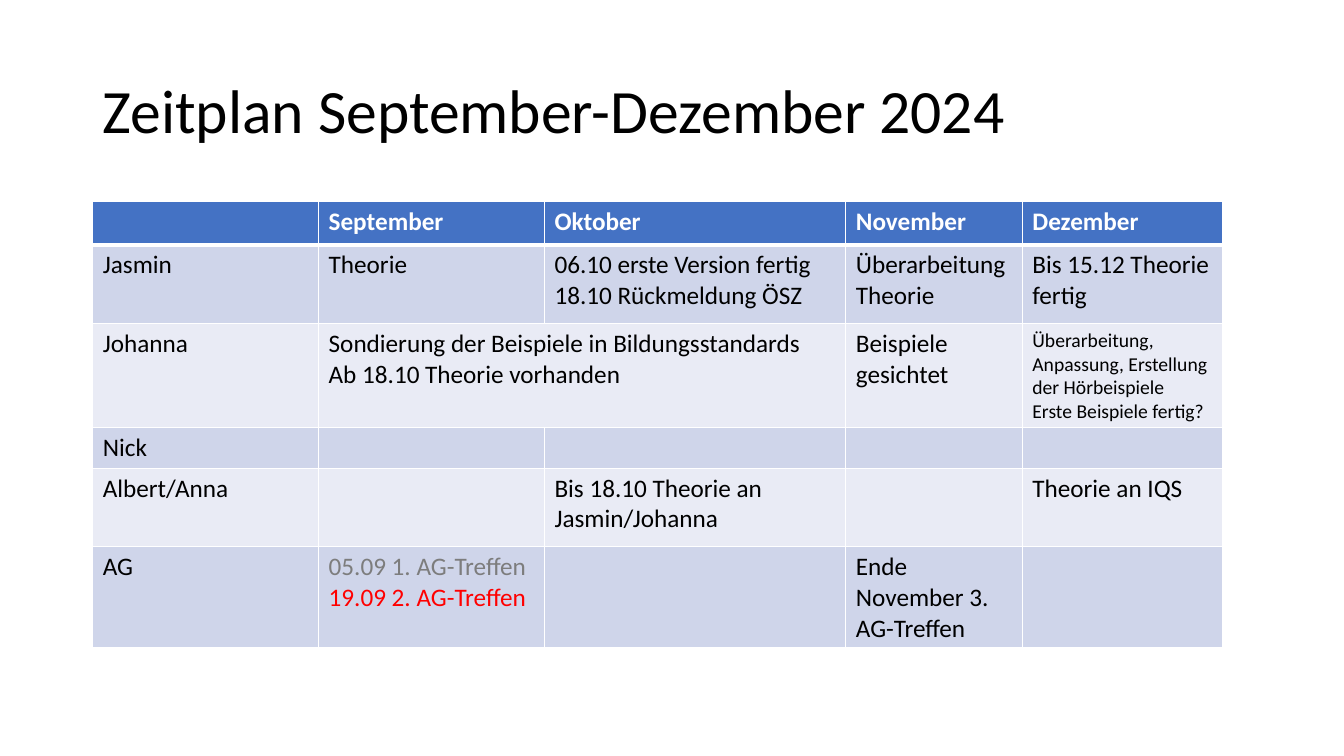
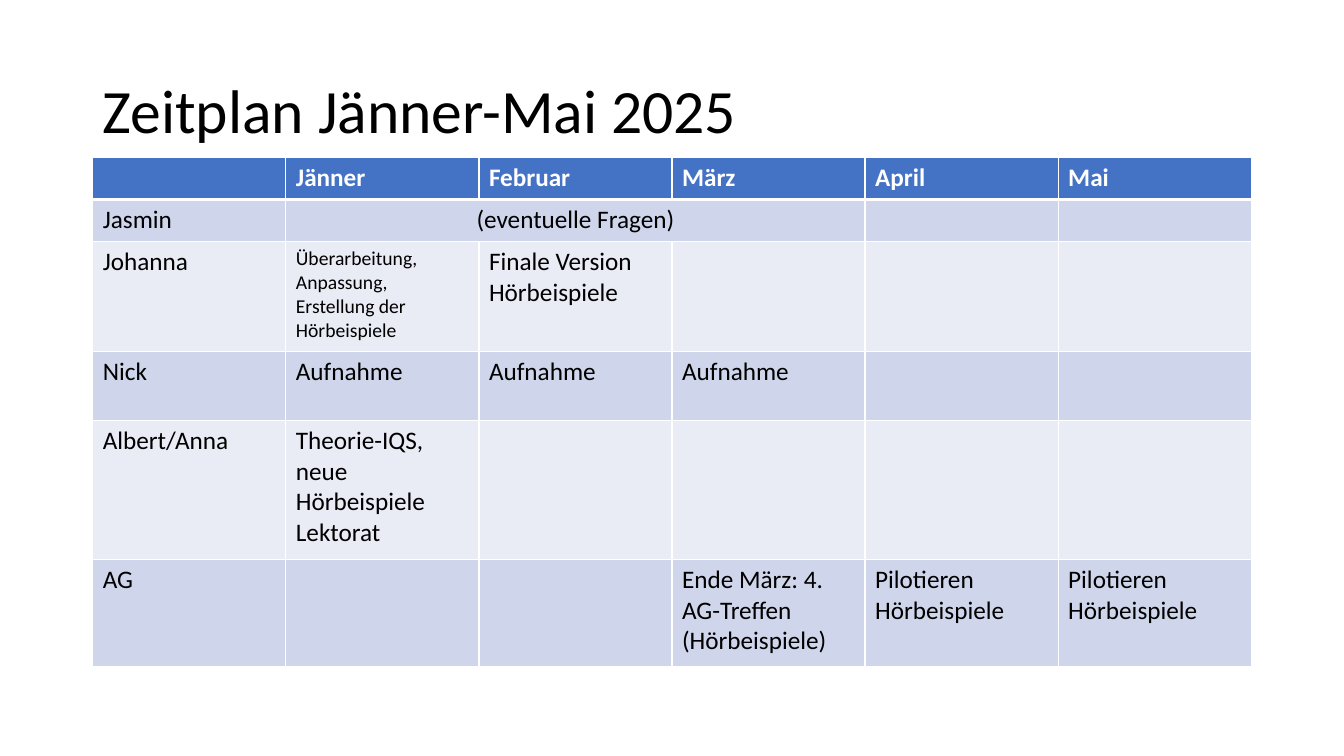
from lxml import etree
from pptx import Presentation
from pptx.dml.color import RGBColor
from pptx.enum.text import MSO_ANCHOR, PP_ALIGN
from pptx.oxml.ns import qn
from pptx.util import Inches, Pt

MIDDLE = MSO_ANCHOR.MIDDLE
LEFT, CENTER = PP_ALIGN.LEFT, PP_ALIGN.CENTER

FONT = "Calibri"
TITLE_SIZE, BODY_SIZE, SMALL_SIZE = 44, 18, 14
COLORS = {
    "header": "4472C4",
    "odd_row": "CFD5EA",
    "even_row": "E9EBF5",
    "line": "FFFFFF",
    "header_text": "FFFFFF",
    "text": "000000",
    "past": "7D7D7D",
    "next": "FF0000",
}
WIDTH, HEIGHT = 13.33, 7.5
MARGIN = 0.92
CONTENT_WIDTH = WIDTH - 2 * MARGIN

# Content: rows of cells; a line break starts a new paragraph
REVISION = "Überarbeitung, Anpassung, Erstellung der Hörbeispiele"
FIRST_DONE = "Erste Beispiele fertig?"
QUESTIONS = "(eventuelle Fragen)"
SMALL_LINES = {REVISION, FIRST_DONE}
LINE_COLORS = {"05.09 1. AG-Treffen": "past", "19.09 2. AG-Treffen": "next"}

plans = [
    {
        "title": "Zeitplan September-Dezember 2024",
        "top": 2,
        "columns": [2.24, 2.24, 2.99, 1.75, 1.99],
        "heights": [0.43, 0.78, 0.78, 0.4, 0.78, 0.78],
        "merge": (2, 1, 2),
        "rows": [
            ["", "September", "Oktober", "November", "Dezember"],
            ["Jasmin", "Theorie", "06.10 erste Version fertig\n18.10 Rückmeldung ÖSZ",
             "Überarbeitung Theorie", "Bis 15.12 Theorie fertig"],
            ["Johanna", "Sondierung der Beispiele in Bildungsstandards\nAb 18.10 Theorie vorhanden",
             "", "Beispiele gesichtet", f"{REVISION}\n{FIRST_DONE}"],
            ["Nick", "", "", "", ""],
            ["Albert/Anna", "", "Bis 18.10 Theorie an Jasmin/Johanna", "", "Theorie an IQS"],
            ["AG", "\n".join(LINE_COLORS), "", "Ende November 3. AG-Treffen", ""],
        ],
    },
    {
        "title": "Zeitplan Jänner-Mai 2025",
        "top": 1.56,
        "columns": [CONTENT_WIDTH / 6] * 6,
        "heights": [0.42, 0.42, 1.09, 0.68, 1.38, 1.06],
        "merge": (1, 1, 3),
        "rows": [
            ["", "Jänner", "Februar", "März", "April", "Mai"],
            ["Jasmin", QUESTIONS, "", "", "", ""],
            ["Johanna", REVISION, "Finale Version Hörbeispiele", "", "", ""],
            ["Nick", "Aufnahme", "Aufnahme", "Aufnahme", "", ""],
            ["Albert/Anna", "Theorie-IQS, neue Hörbeispiele Lektorat", "", "", "", ""],
            ["AG", "", "", "Ende März: 4. AG-Treffen (Hörbeispiele)",
             "Pilotieren Hörbeispiele", "Pilotieren Hörbeispiele"],
        ],
    },
]


def set_font(paragraph, size, color, bold=False):
    font = paragraph.font
    font.name, font.size, font.bold = FONT, Pt(size), bold
    font.color.rgb = RGBColor.from_string(COLORS[color])


def set_borders(cell, top, bottom):
    """White cell borders; the side lines are always one point wide."""
    properties = cell._tc.get_or_add_tcPr()
    for side, points in (("L", 1), ("R", 1), ("T", top), ("B", bottom)):
        line = etree.SubElement(properties, qn(f"a:ln{side}"), w=str(Pt(points)))
        fill = etree.SubElement(line, qn("a:solidFill"))
        etree.SubElement(fill, qn("a:srgbClr"), val=COLORS["line"])


prs = Presentation()
prs.slide_width, prs.slide_height = Inches(WIDTH), Inches(HEIGHT)

for plan in plans:
    slide = prs.slides.add_slide(prs.slide_layouts[6])

    # Title
    title = slide.shapes.add_textbox(
        Inches(MARGIN), Inches(0.4), Inches(CONTENT_WIDTH), Inches(1.45)).text_frame
    title.word_wrap = True
    title.vertical_anchor = MIDDLE
    heading = title.paragraphs[0]
    heading.text = plan["title"]
    heading.line_spacing = 0.9
    set_font(heading, TITLE_SIZE, "text")

    # Schedule grid
    columns, heights, rows = plan["columns"], plan["heights"], plan["rows"]
    schedule = slide.shapes.add_table(
        len(rows), len(columns), Inches(MARGIN), Inches(plan["top"]),
        Inches(sum(columns)), Inches(sum(heights))).table
    for column, width in zip(schedule.columns, columns):
        column.width = Inches(width)
    for row, height in zip(schedule.rows, heights):
        row.height = Inches(height)
    merge_row, first, last = plan["merge"]
    schedule.cell(merge_row, first).merge(schedule.cell(merge_row, last))

    # Schedule cells
    for r, row in enumerate(rows):
        is_header = r == 0
        band = "header" if is_header else "odd_row" if r % 2 else "even_row"
        for c, text in enumerate(row):
            cell = schedule.cell(r, c)
            set_borders(cell, top=3 if r == 1 else 1, bottom=3 if is_header else 1)
            cell.fill.solid()
            cell.fill.fore_color.rgb = RGBColor.from_string(COLORS[band])
            cell.text = text
            for paragraph in cell.text_frame.paragraphs:
                entry = paragraph.text
                paragraph.alignment = CENTER if entry == QUESTIONS else LEFT
                size = SMALL_SIZE if entry in SMALL_LINES else BODY_SIZE
                color = "header_text" if is_header else LINE_COLORS.get(entry, "text")
                set_font(paragraph, size, color, bold=is_header)

prs.save("out.pptx")
